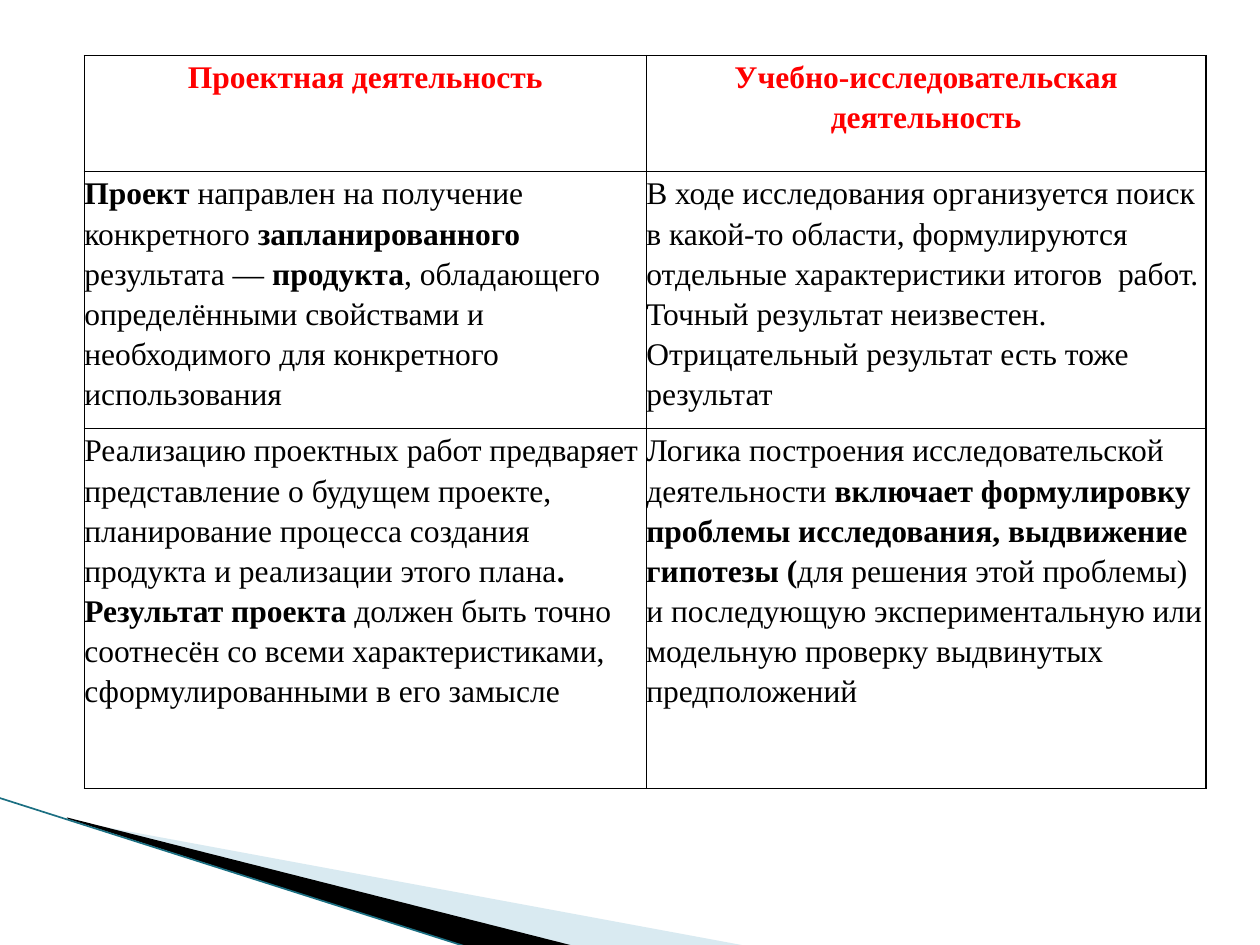
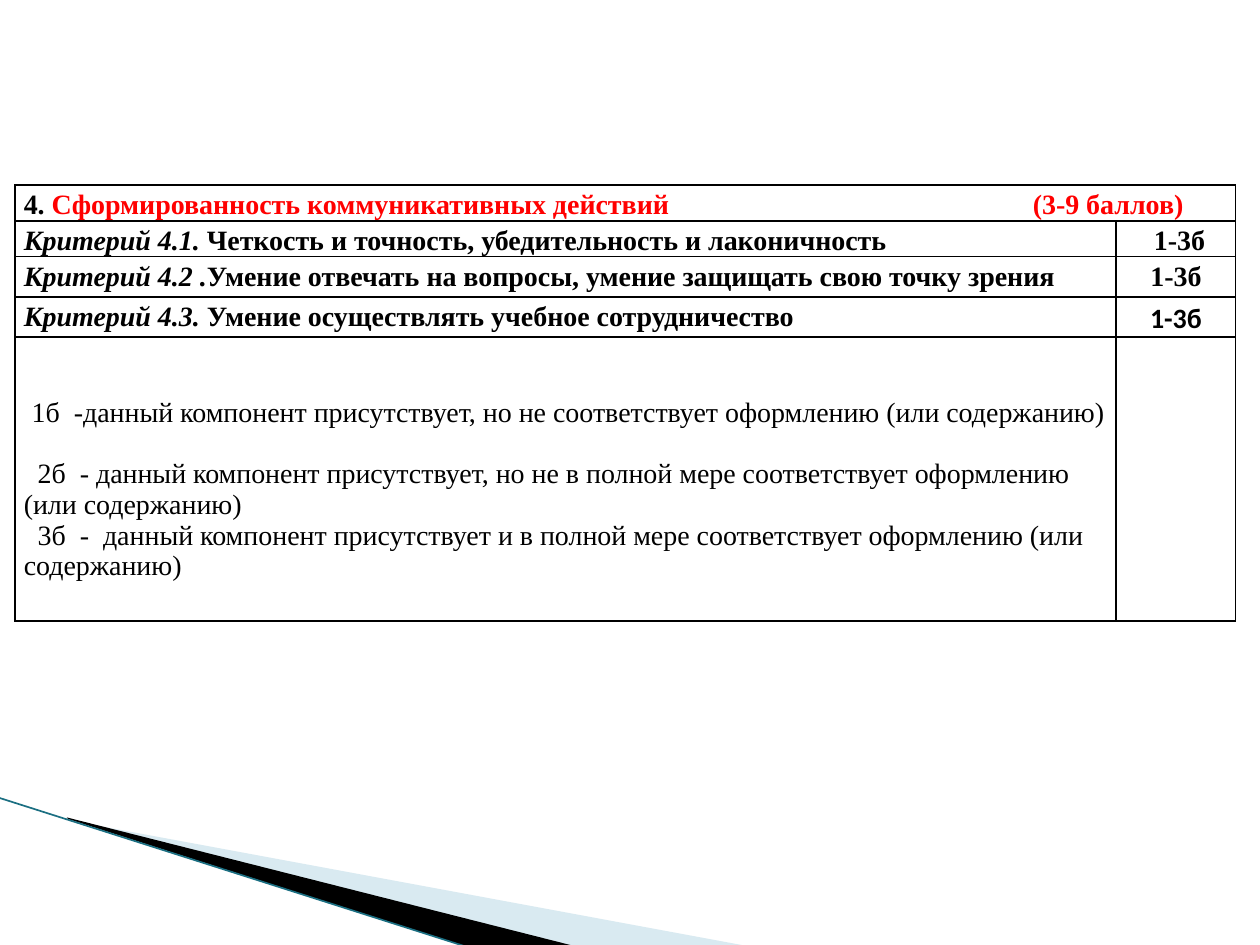
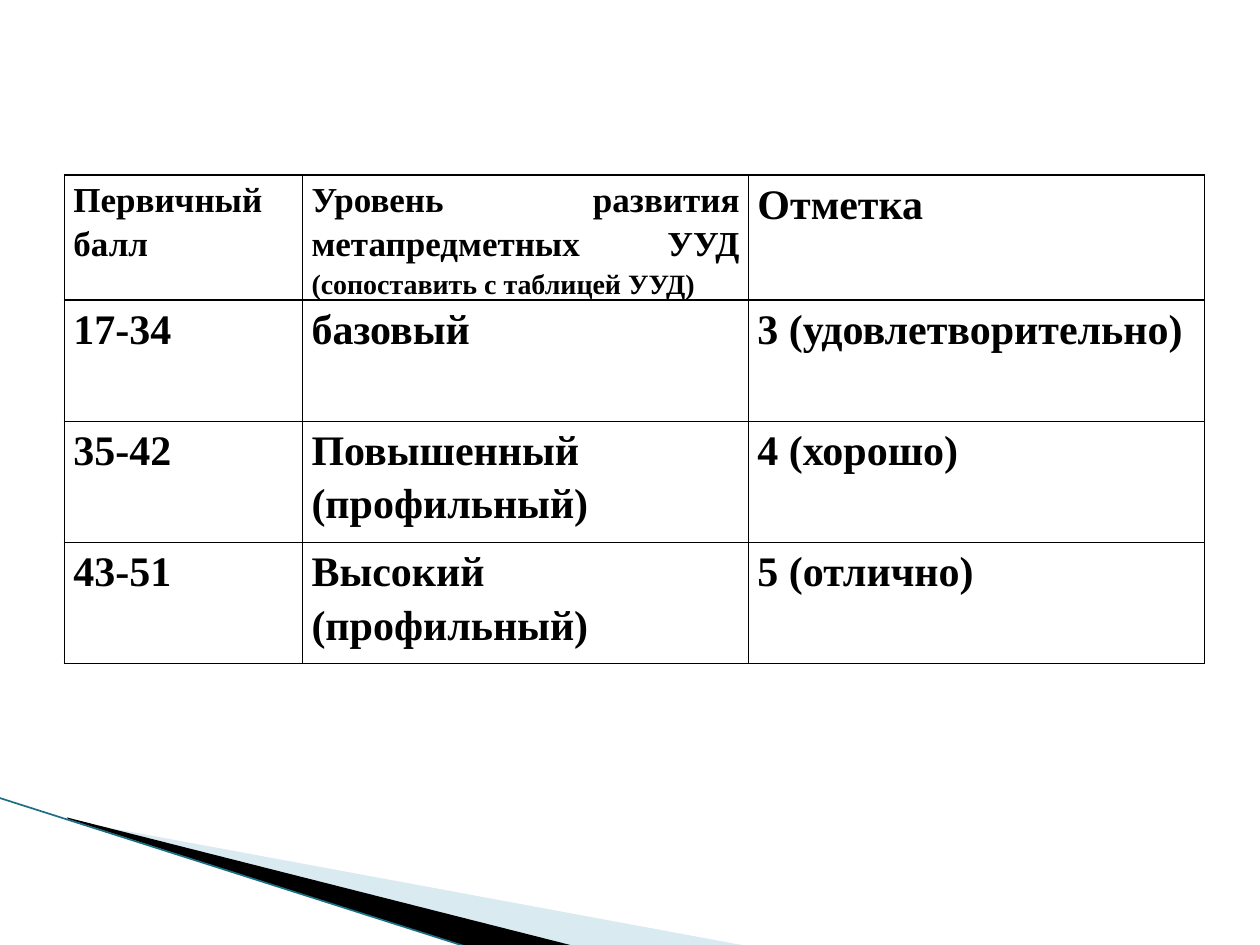
from dataclasses import dataclass

from lxml import etree
from pptx import Presentation
from pptx import util as u
from pptx.dml.color import RGBColor
from pptx.enum import shapes, text
from pptx.oxml import ns

LEFT, CENTER, JUSTIFY = text.PP_ALIGN.LEFT, text.PP_ALIGN.CENTER, text.PP_ALIGN.JUSTIFY


@dataclass(frozen=True)
class Theme:
    font: str = "Times New Roman"
    score_font: str = "Calibri"
    ink: str = "000000"
    accent: str = "FF0000"
    wedge: str = "A0CBDC"
    edge: str = "1B6F82"
    small: int = 16
    body: int = 18
    head: int = 20
    large: int = 24
    border: float = 1
    spacing: float = 1.15


T = Theme()


# --- XML helpers ---

def add_node(parent, tag, **attrs):
    return etree.SubElement(parent, ns.qn(tag), {k: str(v) for k, v in attrs.items()})


def set_borders(cell):
    tc_pr = cell._tc.get_or_add_tcPr()
    for i, side in enumerate(("a:lnL", "a:lnR", "a:lnT", "a:lnB")):
        ln = add_node(tc_pr, side, w=u.Pt(T.border))
        add_node(add_node(ln, "a:solidFill"), "a:srgbClr", val=T.ink)
        tc_pr.insert(i, ln)


# --- Shared corner decoration, kept on the layout ---

def add_wedge(s, points, color, alpha=None):
    pts = [(u.Cm(x), u.Cm(y)) for x, y in points]
    fb = s.shapes.build_freeform(*pts[0], scale=1.0)
    fb.add_line_segments(pts[1:], close=True)
    sp = fb.convert_to_shape()
    sp.shadow.inherit = False
    sp.fill.solid()
    sp.fill.fore_color.rgb = RGBColor.from_string(color)
    sp.line.fill.background()
    if alpha:
        clr = sp.element.spPr.find(".//" + ns.qn("a:srgbClr"))
        add_node(clr, "a:alpha", val=alpha * 1000)
    return sp


def add_edge(s, start, end):
    cx = s.shapes.add_connector(shapes.MSO_CONNECTOR.STRAIGHT,
                                *[u.Cm(v) for v in start + end])
    cx.line.color.rgb = RGBColor.from_string(T.edge)
    cx.line.width = u.Pt(0.95)
    add_node(cx.element.spPr, "a:effectLst")
    return cx


def decorate_layout(s):
    parts = [
        add_wedge(s, [(1.4, 16.54), (15.11, 19.08), (11.58, 19.08), (1.4, 16.51)], T.wedge, 40),
        add_wedge(s, [(1.35, 16.48), (11.61, 19.08), (9.45, 19.1), (1.37, 16.51)], T.ink),
        add_edge(s, (-0.03, 16.08), (9.45, 19.1)),
    ]
    for sp in parts:
        s.slide_layout.shapes.element.append(sp.element)


# --- Text and tables ---

def write_paragraph(p, runs, size, align=LEFT, spacing=T.spacing, before=0, after=0,
                    indent=0, tab=None, font=T.font):
    """Each run is (text, flags) or (text, flags, size); flags: b bold, i italic, r red."""
    p.alignment = align
    p.line_spacing = spacing
    p.space_before, p.space_after = u.Pt(before), u.Pt(after)
    p_pr = p._p.get_or_add_pPr()
    if indent:
        p_pr.set("indent", str(u.Cm(indent)))
    if tab:
        add_node(add_node(p_pr, "a:tabLst"), "a:tab", pos=u.Cm(tab), algn="l")
    for content, flags, *own_size in runs:
        r = p.add_run()
        r.text = content
        r.font.name = font
        r.font.size = u.Pt(own_size[0] if own_size else size)
        r.font.bold = "b" in flags
        r.font.italic = "i" in flags
        r.font.color.rgb = RGBColor.from_string(T.accent if "r" in flags else T.ink)


def write_cell(cell, *paragraphs, size, **fmt):
    tf = cell.text_frame
    for i, runs in enumerate(paragraphs):
        p = tf.add_paragraph() if i else tf.paragraphs[0]
        write_paragraph(p, runs, size, **fmt)


def add_grid(s, left, top, cols, rows, inset):
    tbl = s.shapes.add_table(len(rows), len(cols), u.Cm(left), u.Cm(top),
                             u.Cm(sum(cols)), u.Cm(sum(rows))).table
    tbl.first_row = tbl.horz_banding = False
    for col, width in zip(tbl.columns, cols):
        col.width = u.Cm(width)
    for row, height in zip(tbl.rows, rows):
        row.height = u.Cm(height)
    for cell in tbl.iter_cells():
        cell.margin_left = cell.margin_right = u.Cm(inset)
        cell.margin_top = cell.margin_bottom = 0
        cell.fill.background()
        set_borders(cell)
    return tbl


# --- Slides ---

def build_comparison(s):
    tbl = add_grid(s, 1.7, 1.12, [11.33, 11.28], [2.34, 5.18, 7.26], 0)
    rows = [
        [[("Проектная деятельность", "br")],
         [("Учебно-исследовательская деятельность", "br")]],
        [[("Проект", "b"), (" направлен на получение конкретного ", ""),
          ("запланированного ", "b"), ("результата — ", ""), ("продукта", "b"),
          (", обладающего определёнными свойствами и необходимого для конкретного "
           "использования", "")],
         [("В ходе исследования организуется поиск в какой-то области, формулируются "
           "отдельные характеристики итогов  работ. Точный результат неизвестен. "
           "Отрицательный результат есть тоже результат", "")]],
        [[("Реализацию проектных работ предваряет представление о будущем проекте, "
           "планирование процесса создания продукта и реализации этого плана", ""),
          (". Результат проекта ", "b"),
          ("должен быть точно соотнесён со всеми характеристиками, сформулированными "
           "в его замысле", "")],
         [("Логика построения исследовательской деятельности ", ""),
          ("включает формулировку проблемы исследования, выдвижение гипотезы (", "b"),
          ("для решения этой проблемы) и последующую экспериментальную или модельную "
           "проверку выдвинутых предположений", "")]],
    ]
    for i, row in enumerate(rows):
        for j, runs in enumerate(row):
            write_cell(tbl.cell(i, j), runs, size=T.body, after=10,
                       align=LEFT if i else CENTER)


def build_criteria(s):
    tbl = add_grid(s, 0.3, 3.73, [22.2, 2.41], [0.71, 0.71, 0.81, 0.81, 5.72], 0.18)
    # Heading across both columns
    tbl.cell(0, 0).merge(tbl.cell(0, 1))
    write_cell(tbl.cell(0, 0),
               [("4. ", "b"),
                ("Сформированность коммуникативных действий\t(3-9 баллов)", "br")],
               size=T.small, tab=20.34)
    # Criteria and their scores
    criteria = [
        ("Критерий 4.1. ", "Четкость и точность, убедительность и лаконичность",
         " 1-3б", T.font),
        ("Критерий 4.2 .", "Умение отвечать на вопросы, умение защищать свою точку зрения",
         "1-3б", T.font),
        ("Критерий 4.3. ", "Умение осуществлять учебное сотрудничество",
         "1-3б", T.score_font),
    ]
    for i, (label, criterion, score, font) in enumerate(criteria, 1):
        write_cell(tbl.cell(i, 0), [(label, "bi"), (criterion, "b")], size=T.small)
        write_cell(tbl.cell(i, 1), [(score, "b")], size=T.small, align=CENTER, font=font)
    # Meaning of the scores
    legend = tbl.cell(4, 0)
    legend.margin_top = u.Cm(1.23)
    levels = [
        ("1б  -данный компонент присутствует, но не соответствует оформлению "
         "(или содержанию)", 0.16, 0),
        ("2б  - данный компонент присутствует, но не в полной мере соответствует "
         "оформлению (или содержанию)", 0.28, 18),
        ("3б  -  данный компонент присутствует и в полной мере соответствует "
         "оформлению (или содержанию)", 0.28, 0.7),
    ]
    tf = legend.text_frame
    for i, (content, indent, before) in enumerate(levels):
        p = tf.add_paragraph() if i else tf.paragraphs[0]
        write_paragraph(p, [(content, "")], T.small, spacing=0.97,
                        before=before, indent=indent)


def build_marks(s):
    tbl = add_grid(s, 1.3, 3.53, [4.8, 8.99, 9.19], [2.51] + [2.44] * 3, 0.18)
    header = [
        [("Первичный балл", "b", T.head)],
        [("Уровень развития метапредметных УУД ", "b", T.head),
         ("(сопоставить с таблицей УУД)", "b", T.small)],
        [("Отметка", "b")],
    ]
    for j, runs in enumerate(header):
        write_cell(tbl.cell(0, j), runs, size=T.large, align=JUSTIFY)
    marks = [
        ("17-34", "базовый", "3 (удовлетворительно)"),
        ("35-42", "Повышенный\n(профильный)", "4 (хорошо)"),
        ("43-51", "Высокий (профильный)", "5 (отлично)"),
    ]
    for i, row in enumerate(marks, 1):
        for j, content in enumerate(row):
            write_cell(tbl.cell(i, j), *[[(line, "b")] for line in content.split("\n")],
                       size=T.large, align=JUSTIFY)


def main():
    prs = Presentation()
    prs.slide_width, prs.slide_height = u.Cm(25.4), u.Cm(19.05)
    blank = prs.slide_layouts.get_by_name("Blank")
    for i, build in enumerate((build_comparison, build_criteria, build_marks)):
        s = prs.slides.add_slide(blank)
        if i == 0:
            decorate_layout(s)
        build(s)
    prs.save("out.pptx")


if __name__ == "__main__":
    main()
